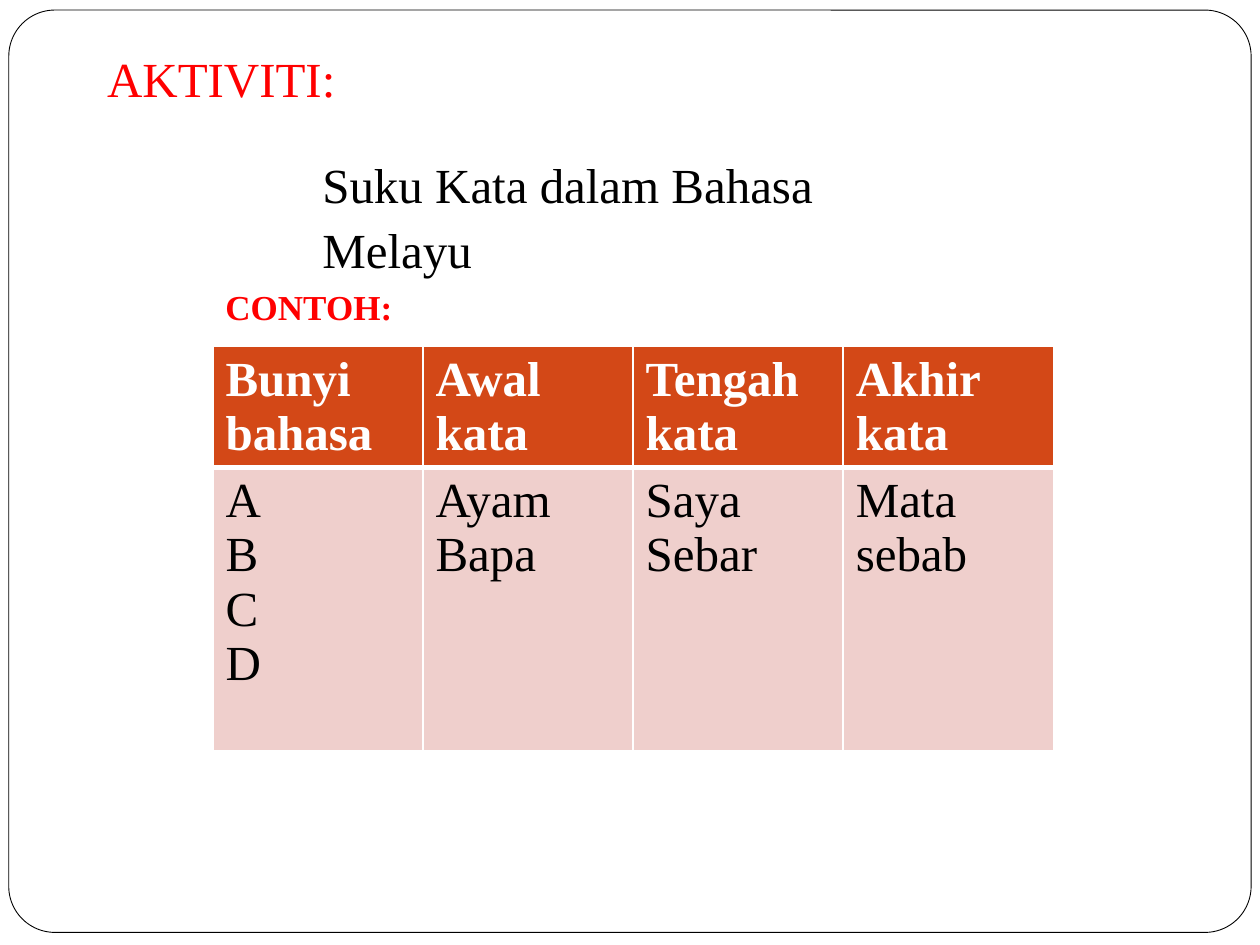
"""Build a slide on Malay syllables with a table of examples."""
from lxml.etree import fromstring
from pptx import Presentation
from pptx.dml.color import RGBColor as Rgb
from pptx.enum.shapes import MSO_SHAPE as Kind
from pptx.enum.text import MSO_ANCHOR as Anchor, MSO_AUTO_SIZE as Fit, PP_ALIGN as Align
from pptx.oxml.ns import nsdecls
from pptx.util import Inches, Pt

HEAD = "AKTIVITI:"
TOPIC = "Suku Kata dalam Bahasa Melayu"
LABEL = "CONTOH:"
ROWS = [
    [["Bunyi bahasa"], ["Awal kata"], ["Tengah kata"], ["Akhir kata"]],
    [["A", "B", "C", "D"], ["Ayam", "Bapa"], ["Saya", "Sebar"], ["Mata", "sebab"]],
]
HIGHS = [0.95, 2.25]
WIDE = 6.67


class Theme:
    """Fonts, sizes and colours."""
    font, big, small = "Times New Roman", 28, 20
    white, black, red = "FFFFFF", "000000", "FF0000"
    fills = ["D34817", "EFCFCC"]


def paint(fill, tone):
    fill.solid()
    fill.fore_color.rgb = Rgb.from_string(tone)


def write(frame, lines, size=Theme.big, tone=Theme.black, bold=False, gap=1.0):
    frame.word_wrap = True
    for i, line in enumerate(lines):
        para = frame.paragraphs[0] if i == 0 else frame.add_paragraph()
        para.alignment, para.line_spacing = Align.LEFT, gap
        run = para.add_run()
        run.text = line
        font = run.font
        font.name, font.size, font.bold = Theme.font, Pt(size), bold
        font.color.rgb = Rgb.from_string(tone)


def place(shape, box, text, **form):
    shape.left, shape.top, shape.width, shape.height = map(Inches, box)
    frame = shape.text_frame
    frame.auto_size, frame.vertical_anchor = Fit.NONE, Anchor.TOP
    write(frame, [text], gap=1.1, **form)


def edge(cell, **sides):
    for i, (side, width) in enumerate(sides.items()):
        cell._tc.get_or_add_tcPr().insert(i, fromstring(
            f'<a:ln{side} {nsdecls("a")} w="{Pt(width)}"><a:solidFill>'
            f'<a:srgbClr val="{Theme.white}"/></a:solidFill></a:ln{side}>'))


def add_grid(shapes):
    grid = shapes.add_table(len(ROWS), len(ROWS[0]), Inches(1.69), Inches(2.75),
                            Inches(WIDE), Inches(sum(HIGHS))).table
    for col in grid.columns:
        col.width = Inches(WIDE / len(ROWS[0]))
    for r, row in enumerate(ROWS):
        grid.rows[r].height = Inches(HIGHS[r])
        top = r == 0
        for c, lines in enumerate(row):
            cell = grid.cell(r, c)
            paint(cell.fill, Theme.fills[r])
            edge(cell, L=1, R=1, T=1 if top else 3, B=3 if top else 1)
            write(cell.text_frame, lines, bold=top,
                  tone=Theme.white if top else Theme.black)


def main():
    deck = Presentation()
    deck.slide_width, deck.slide_height = Inches(10), Inches(7.5)
    shapes = deck.slides.add_slide(deck.slide_layouts[5]).shapes
    panel = shapes.add_shape(Kind.ROUNDED_RECTANGLE, *map(Inches, (0.07, 0.08, 9.86, 7.32)))
    panel.adjustments[0] = 0.05
    panel.shadow.inherit = False
    paint(panel.fill, Theme.white)
    paint(panel.line.fill, Theme.black)
    panel.line.width = Pt(0.5)
    title = shapes.title
    shapes._spTree.remove(panel._element)
    shapes._spTree.insert(2, panel._element)
    add_grid(shapes)
    place(title, (0.75, 0.29, 2.6, 0.57), HEAD, tone=Theme.red)
    topic, label = (shapes.add_textbox(0, 0, 0, 0) for _ in range(2))
    place(topic, (2.46, 1.13, 5.12, 0.57), TOPIC)
    place(label, (1.69, 2.18, 2.05, 0.44), LABEL, size=Theme.small, tone=Theme.red, bold=True)
    deck.save("out.pptx")


if __name__ == "__main__":
    main()
